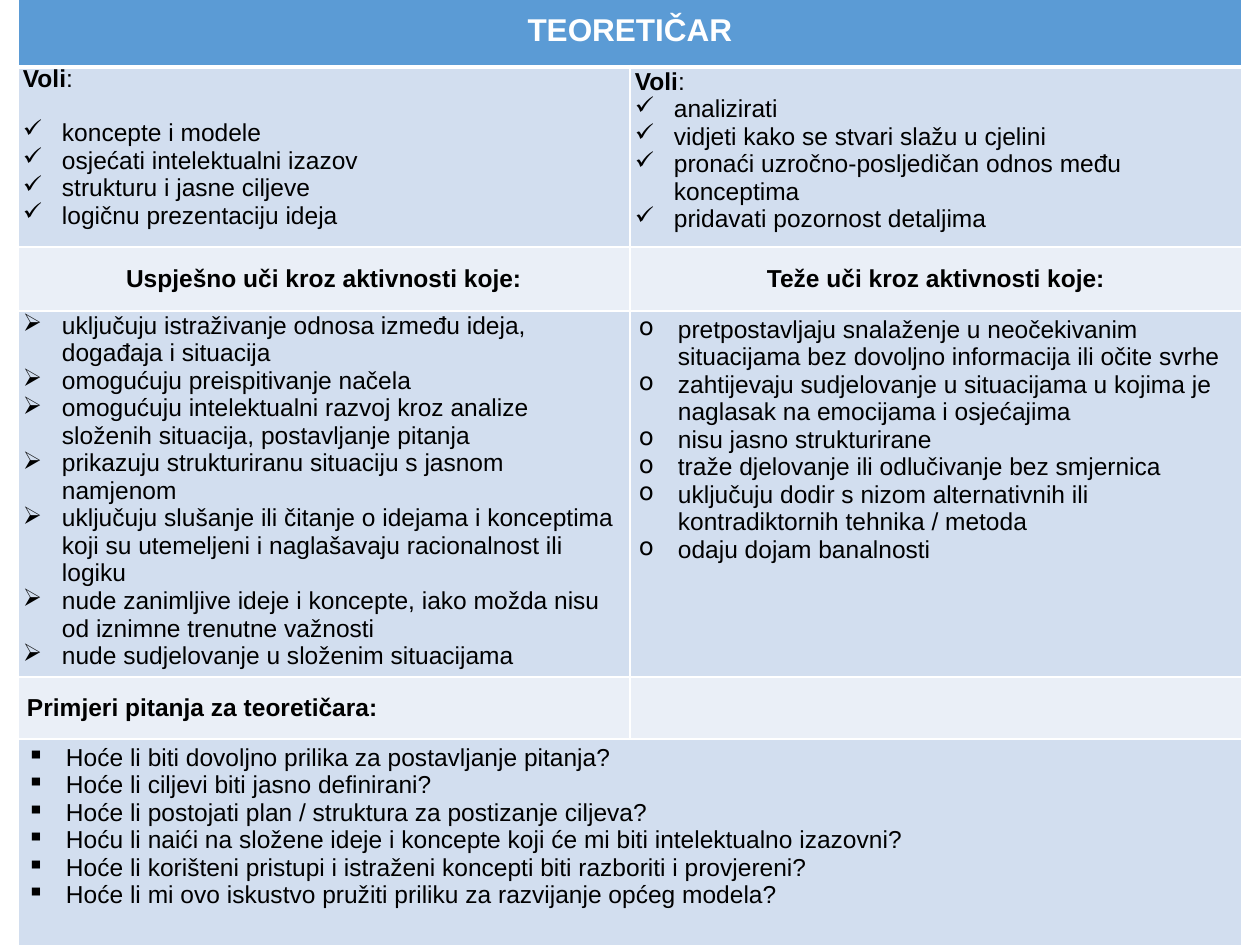
from dataclasses import dataclass

from lxml import etree
from pptx import Presentation
from pptx import util as u
from pptx.dml.color import RGBColor
from pptx.enum import text
from pptx.oxml.ns import qn

PX = 914400 // 126


@dataclass(frozen=True)
class Theme:
    font: str = "Arial"
    head: str = "5B9BD5"
    dark: str = "D2DEEF"
    light: str = "EAEFF7"
    white: str = "FFFFFF"
    black: str = "000000"
    big: int = 18
    base: int = 14


T = Theme()

TITLE = "TEORETIČAR"
LIKES = "Voli"
LIKES_A = ["koncepte i modele", "osjećati intelektualni izazov",
           "strukturu i jasne ciljeve", "logičnu prezentaciju ideja"]
LIKES_B = ["analizirati", "vidjeti kako se stvari slažu u cjelini",
           "pronaći uzročno-posljedičan odnos među konceptima",
           "pridavati pozornost detaljima"]
HEADS = ["Uspješno uči kroz aktivnosti koje:", "Teže uči kroz aktivnosti koje:"]
EASY = [
    "uključuju istraživanje odnosa između ideja, događaja i situacija",
    "omogućuju preispitivanje načela",
    "omogućuju intelektualni razvoj kroz analize složenih situacija, postavljanje pitanja",
    "prikazuju strukturiranu situaciju s jasnom namjenom",
    "uključuju slušanje ili čitanje o idejama i konceptima koji su utemeljeni "
    "i naglašavaju racionalnost ili logiku",
    "nude zanimljive ideje i koncepte, iako možda nisu od iznimne trenutne važnosti",
    "nude sudjelovanje u složenim situacijama",
]
HARD = [
    "pretpostavljaju snalaženje u neočekivanim situacijama bez dovoljno "
    "informacija ili očite svrhe",
    "zahtijevaju sudjelovanje u situacijama u kojima je naglasak na emocijama i osjećajima",
    "nisu jasno strukturirane",
    "traže djelovanje ili odlučivanje bez smjernica",
    "uključuju dodir s nizom alternativnih ili kontradiktornih tehnika / metoda",
    "odaju dojam banalnosti",
]
SAMPLES = "Primjeri pitanja za teoretičara:"
ASKS = [
    "Hoće li biti dovoljno prilika za postavljanje pitanja?",
    "Hoće li ciljevi biti jasno definirani?",
    "Hoće li postojati plan / struktura za postizanje ciljeva?",
    "Hoću li naići na složene ideje i koncepte koji će mi biti intelektualno izazovni?",
    "Hoće li korišteni pristupi i istraženi koncepti biti razboriti i provjereni?",
    "Hoće li mi ovo iskustvo pružiti priliku za razvijanje općeg modela?",
]

LEFT, TOP, COL = 18, -6, 612
ROWS = [73, 180, 64, 366, 62, 210]
FILLS = [T.head, T.dark, T.light, T.dark, T.light, T.dark]
INDENT = 39
WIDE, TIGHT = (9, 5), (5, 1)  # side and top margins


def rgb(code):
    return RGBColor.from_string(code)


def write(cell, words, bold=False, size=T.base, color=T.black,
          align=None, mark=None, tail="", line=None, after=None):
    """Add one paragraph; tail is a plain run after the words."""
    frame = cell.text_frame
    para = frame.paragraphs[0]
    if para.runs:
        para = frame.add_paragraph()
    para.alignment = align
    if line:
        para.line_spacing = u.Pt(line)
    if after:
        para.space_after = after * PX
    if mark:
        props = para._p.get_or_add_pPr()
        props.set("marL", str(INDENT * PX))
        props.set("indent", str(-INDENT * PX))
        etree.SubElement(props, qn("a:buChar"), char=mark)
    for part, heavy in ((words, bold), (tail, False)):
        if part:
            run = para.add_run()
            run.text = part
            font = run.font
            font.name, font.size, font.bold = T.font, u.Pt(size), heavy
            font.color.rgb = rgb(color)


def items(cell, lines, mark):
    for words in lines:
        write(cell, words, mark=mark)


def pad(cell, side, top):
    cell.margin_left = cell.margin_right = side * PX
    cell.margin_top, cell.margin_bottom = top * PX, 5 * PX


def border(cell, **widths):
    """Draw white edges, 1 pt unless a width is given by edge letter."""
    props = cell._tc.get_or_add_tcPr()
    for pos, edge in enumerate("LRTB"):
        line = etree.Element(qn(f"a:ln{edge}"), w=str(u.Pt(widths.get(edge, 1))))
        fill = etree.SubElement(line, qn("a:solidFill"))
        etree.SubElement(fill, qn("a:srgbClr"), val=T.white)
        props.insert(pos, line)


def grid(slide):
    frame = slide.shapes.add_table(len(ROWS), 2, LEFT * PX, TOP * PX,
                                   2 * COL * PX, sum(ROWS) * PX)
    table = frame.table
    table.horz_banding = False
    for col in table.columns:
        col.width = COL * PX
    for r, (high, tone) in enumerate(zip(ROWS, FILLS)):
        table.rows[r].height = high * PX
        for c in range(2):
            cell = table.cell(r, c)
            cell.fill.solid()
            cell.fill.fore_color.rgb = rgb(tone)
            border(cell, **({"B": 3} if r == 0 else {"T": 3} if r == 1 else {}))
            tight = r == 1 or (r, c) == (3, 0)
            pad(cell, *(TIGHT if tight else WIDE))
            if r in (0, 2, 4):
                cell.vertical_anchor = text.MSO_ANCHOR.MIDDLE
    for r in (0, len(ROWS) - 1):
        table.cell(r, 0).merge(table.cell(r, 1))
    return table


def main():
    deck = Presentation()
    deck.slide_width, deck.slide_height = u.Inches(10), u.Inches(7.5)
    slide = deck.slides.add_slide(deck.slide_layouts[6])
    cell = grid(slide).cell
    mid = text.PP_ALIGN.CENTER

    write(cell(0, 0), TITLE, bold=True, size=T.big, color=T.white, align=mid)
    write(cell(1, 0), LIKES, bold=True, tail=":", line=T.base, after=27)
    write(cell(1, 1), LIKES, bold=True, tail=":")
    for c, words in enumerate(HEADS):
        write(cell(2, c), words, bold=True, align=mid)
    write(cell(4, 0), SAMPLES, bold=True)

    for r, c, lines, mark in ((1, 0, LIKES_A, "✓"), (1, 1, LIKES_B, "✓"),
                              (3, 0, EASY, "➢"), (3, 1, HARD, "o"),
                              (5, 0, ASKS, "▪")):
        items(cell(r, c), lines, mark)
    deck.save("out.pptx")


if __name__ == "__main__":
    main()
